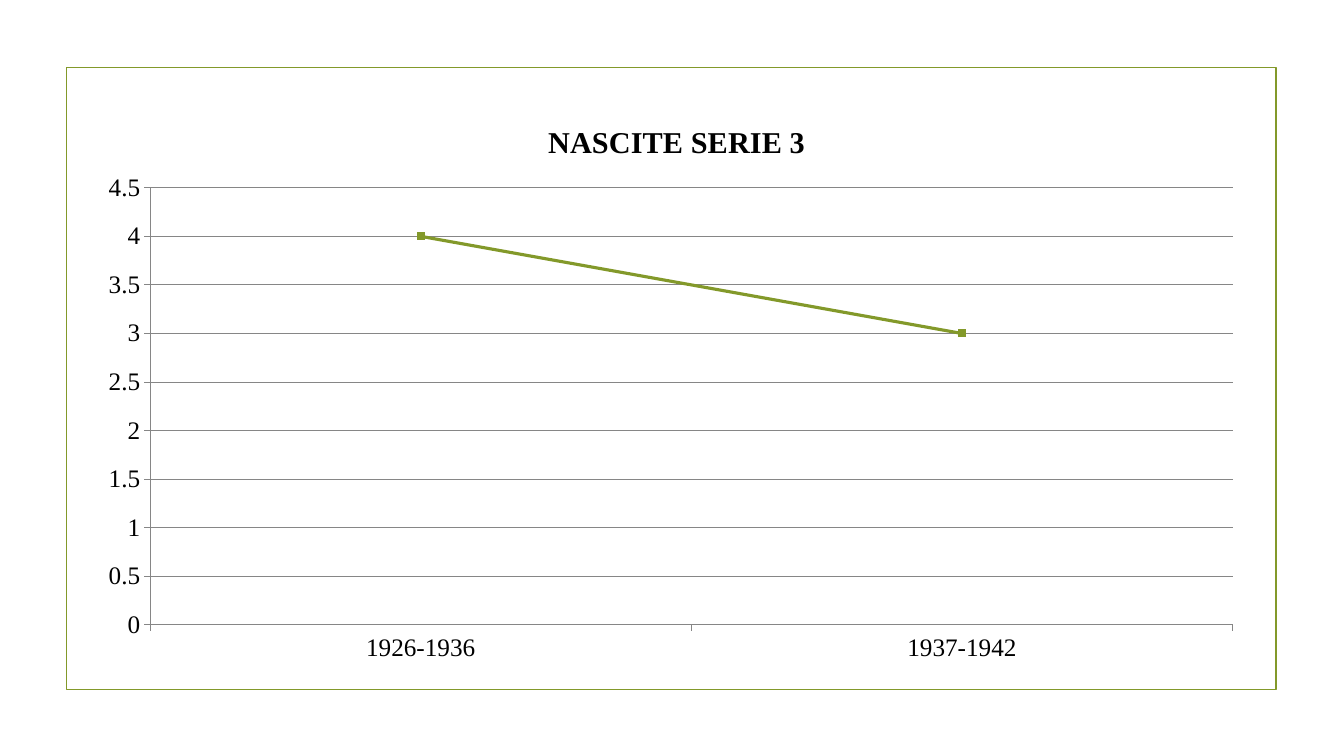
"""Build a slide with a framed line chart of births in series 3."""
from lxml import etree
from pptx import Presentation
from pptx.chart.data import CategoryChartData
from pptx.dml.color import RGBColor
from pptx.enum import chart as ch, shapes
from pptx.oxml import ns
from pptx.util import Inches, Pt

TITLE = "NASCITE SERIE 3"
SERIES = "Series 1"
BIRTHS = {"1926-1936": 4, "1937-1942": 3}
FONT = "Times New Roman"
GREEN = RGBColor(0x83, 0x99, 0x2A)
GRAY = RGBColor(0x86, 0x86, 0x86)
BLACK = RGBColor(0, 0, 0)
FRAME = (0.66, 0.67, 12, 6.17)
CHART = (0.85, 0.93, 11.62, 5.76)
TITLE_LAYOUT = {"xMode": "edge", "yMode": "edge", "x": 0.39, "y": 0.04}
PLOT_LAYOUT = {"layoutTarget": "inner", "xMode": "edge", "yMode": "edge",
               "x": 0.055, "y": 0.162, "w": 0.924, "h": 0.753}


def set_layout(parent, after, values):
    for old in parent.findall(ns.qn("c:layout")):
        parent.remove(old)
    layout = etree.Element(ns.qn("c:layout"))
    manual = etree.SubElement(layout, ns.qn("c:manualLayout"))
    for name, value in values.items():
        etree.SubElement(manual, ns.qn("c:" + name)).set("val", str(value))
    if after is None:
        parent.insert(0, layout)
    else:
        after.addnext(layout)


def style_font(font, size, bold=False):
    font.name, font.size, font.bold = FONT, Pt(size), bold
    font.color.rgb = BLACK


def style_line(line, color, width):
    line.color.rgb = color
    line.width = Pt(width)


def main():
    prs = Presentation()
    prs.slide_width, prs.slide_height = Inches(13.33), Inches(7.5)
    s = prs.slides.add_slide(prs.slide_layouts[6])

    sp = s.shapes.add_shape(shapes.MSO_SHAPE.RECTANGLE, *map(Inches, FRAME))
    sp.shadow.inherit = False
    sp.fill.background()
    style_line(sp.line, GREEN, 1.25)

    data = CategoryChartData()
    data.categories = list(BIRTHS)
    data.add_series(SERIES, list(BIRTHS.values()))
    chart = s.shapes.add_chart(ch.XL_CHART_TYPE.LINE_MARKERS,
                               *map(Inches, CHART), data).chart
    style_font(chart.font, 18)
    chart.has_legend = False
    chart.has_title = True
    tf = chart.chart_title.text_frame
    tf.text = TITLE
    style_font(tf.paragraphs[0].runs[0].font, 21.6, True)
    chart.chart_title.include_in_layout = False
    title = chart.element.find(".//" + ns.qn("c:title"))
    set_layout(title, title.find(ns.qn("c:tx")), TITLE_LAYOUT)
    set_layout(chart.element.find(".//" + ns.qn("c:plotArea")), None, PLOT_LAYOUT)

    for axis in (chart.category_axis, chart.value_axis):
        axis.major_tick_mark = ch.XL_TICK_MARK.OUTSIDE
        axis.minor_tick_mark = ch.XL_TICK_MARK.NONE
        style_line(axis.format.line, GRAY, 0.75)
    axis = chart.value_axis
    axis.minimum_scale, axis.maximum_scale, axis.major_unit = 0, 4.5, 0.5
    axis.has_major_gridlines = True
    style_line(axis.major_gridlines.format.line, GRAY, 0.75)

    plot = chart.plots[0]
    plot.vary_by_categories = False
    births = plot.series[0]
    births.smooth = False
    style_line(births.format.line, GREEN, 2.25)
    births.marker.style = ch.XL_MARKER_STYLE.SQUARE
    births.marker.size = 5
    births.marker.format.fill.solid()
    births.marker.format.fill.fore_color.rgb = GREEN
    births.marker.format.line.color.rgb = GREEN

    prs.save("out.pptx")


if __name__ == "__main__":
    main()
